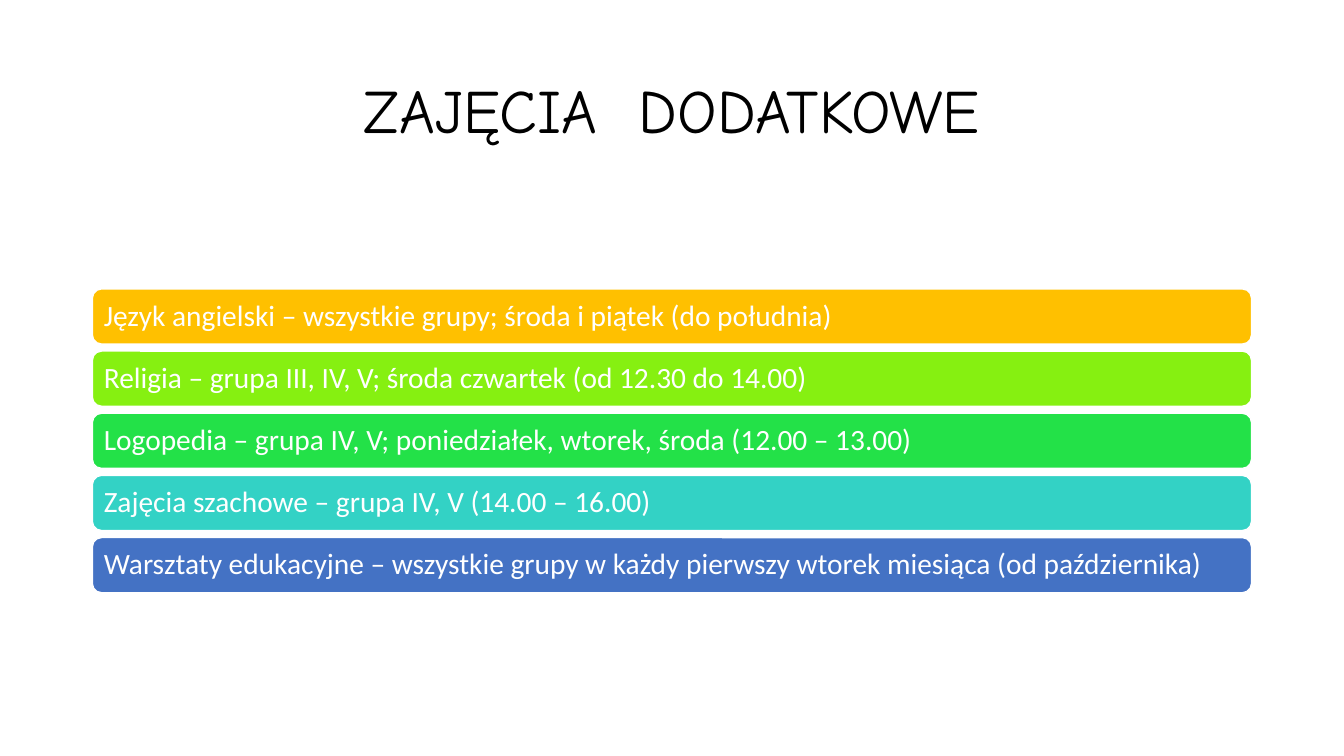
from dataclasses import dataclass

from pptx import Presentation
from pptx import util as u
from pptx.dml.color import RGBColor
from pptx.enum import shapes, text


@dataclass(frozen=True)
class Theme:
    title_font: str = "Comic Neue"
    body_font: str = "Calibri"
    title_size: float = 44
    body_size: float = 21
    dark: str = "000000"
    light: str = "FFFFFF"
    bars: tuple = ("FFC000", "86F011", "23E148", "33D2C5", "4472C4")


class Deck:
    def __init__(self, prs, theme):
        self.theme = theme
        self.s = prs.slides.add_slide(prs.slide_layouts[5])

    def label(self, sp, content, font, size, color, align, inset):
        tf = sp.text_frame
        tf.word_wrap = True
        tf.auto_size = text.MSO_AUTO_SIZE.NONE
        tf.vertical_anchor = text.MSO_ANCHOR.MIDDLE
        tf.margin_left = tf.margin_right = u.Pt(inset)
        tf.margin_top = tf.margin_bottom = u.Pt(3.6)
        p = tf.paragraphs[0]
        p.alignment = align
        p.line_spacing = 0.9
        r = p.add_run()
        r.text = content
        r.font.name = font
        r.font.size = u.Pt(size)
        r.font.color.rgb = RGBColor.from_string(color)

    def title(self, content, x, y, w, h):
        t = self.theme
        sp = self.s.shapes.title
        sp.left, sp.top, sp.width, sp.height = map(u.Pt, (x, y, w, h))
        self.label(sp, content, t.title_font, t.title_size, t.dark,
                   text.PP_ALIGN.CENTER, 7.2)

    def bar(self, content, fill, x, y, w, h):
        t = self.theme
        sp = self.s.shapes.add_shape(
            shapes.MSO_SHAPE.ROUNDED_RECTANGLE, *map(u.Pt, (x, y, w, h)))
        sp.shadow.inherit = False
        sp.fill.solid()
        sp.fill.fore_color.rgb = RGBColor.from_string(fill)
        sp.line.color.rgb = RGBColor.from_string(t.light)
        sp.line.width = u.Pt(1)
        self.label(sp, content, t.body_font, t.body_size, t.light,
                   text.PP_ALIGN.LEFT, 6.3)


def main():
    prs = Presentation()
    prs.slide_width, prs.slide_height = u.Pt(960), u.Pt(540)
    theme = Theme()
    deck = Deck(prs, theme)
    left, width = 66, 828
    deck.title("ZAJĘCIA  DODATKOWE", left, 28.75, width, 104.4)

    classes = [
        "Język angielski – wszystkie grupy; środa i piątek (do południa)",
        "Religia – grupa III, IV, V; środa czwartek (od 12.30 do 14.00)",
        "Logopedia – grupa IV, V; poniedziałek, wtorek, środa (12.00 – 13.00)",
        "Zajęcia szachowe – grupa IV, V (14.00 – 16.00)",
        "Warsztaty edukacyjne – wszystkie grupy w każdy pierwszy wtorek "
        "miesiąca (od października)",
    ]
    top, pitch, height = 206.4, 44.4, 39.4
    for i, (content, fill) in enumerate(zip(classes, theme.bars)):
        deck.bar(content, fill, left, top + i * pitch, width, height)

    prs.save("out.pptx")


if __name__ == "__main__":
    main()
